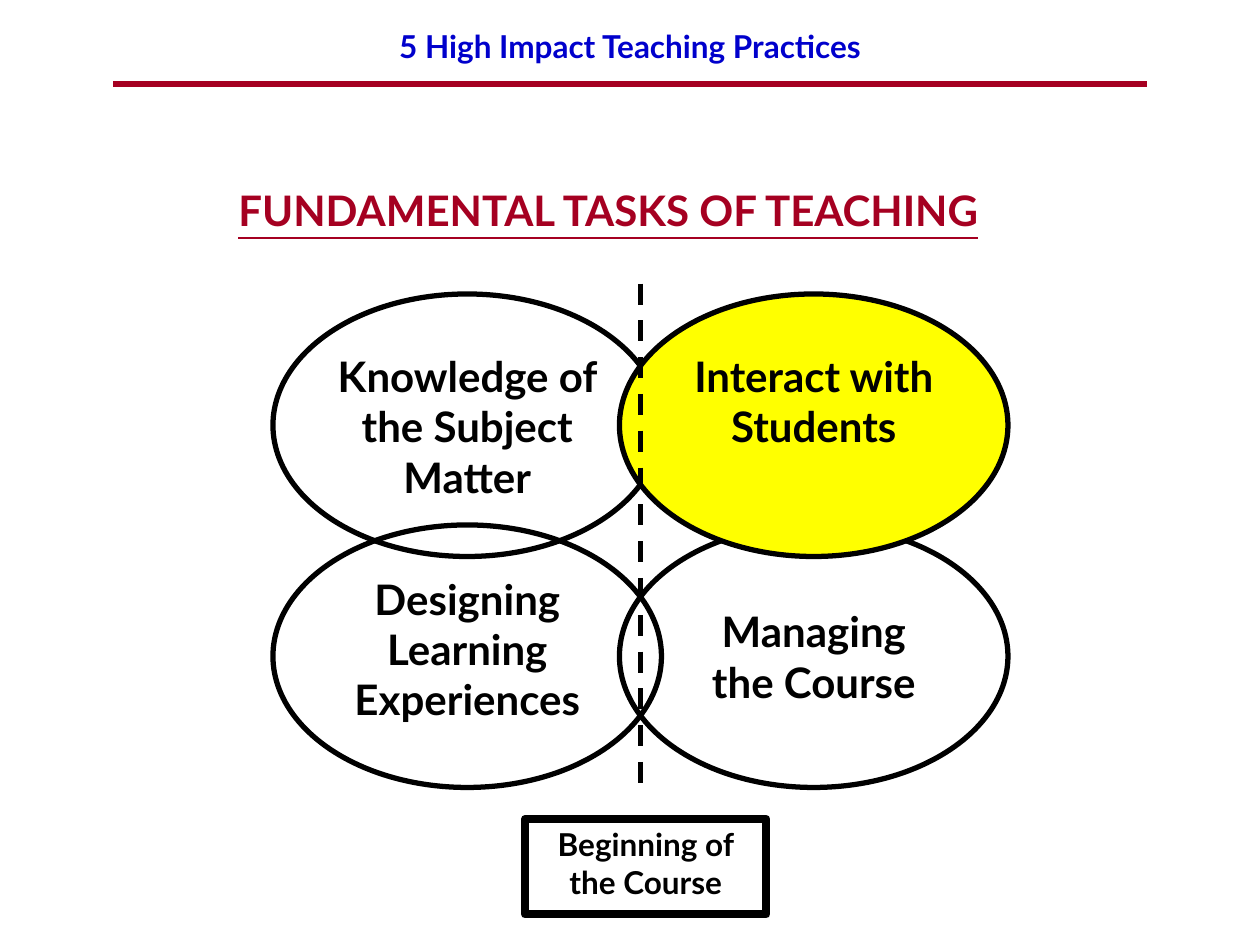
from dataclasses import dataclass

from lxml.etree import SubElement
from pptx import Presentation
from pptx.dml.color import RGBColor as RGB
from pptx.enum.dml import MSO_LINE
from pptx.enum.shapes import MSO_CONNECTOR, MSO_SHAPE
from pptx.enum.text import MSO_ANCHOR, MSO_AUTO_SIZE, PP_ALIGN
from pptx.oxml.ns import qn
from pptx.util import Pt

HEADER = "5 High Impact Teaching Practices"
TITLE = "FUNDAMENTAL TASKS OF TEACHING"
MILESTONE = "Beginning of the Course"
# column, row, text, lines, text width, text top, highlighted
TASKS = [
    (1, 1, "Managing the Course", 2, 260, 571, False),
    (0, 0, "Knowledge of the Subject Matter", 3, 310, 328, False),
    (1, 0, "Interact with Students", 3, 270, 328, True),
    (0, 1, "Designing Learning Experiences", 3, 270, 540, False),
]


@dataclass(frozen=True)
class Theme:
    font: str = "Lato"
    ink: RGB = RGB(0, 0, 0)
    blue: RGB = RGB(0x00, 0x00, 0xCC)
    red: RGB = RGB(0xA5, 0x00, 0x21)
    yellow: RGB = RGB(0xFF, 0xFF, 0x00)
    large: int = 24
    small: int = 18
    line: float = 3
    frame: float = 4.5


T = Theme()
PX = 7620
LEFT, TOP = 260, 280
STEP_X, STEP_Y = 330, 220
OVAL_W, OVAL_H = 370, 250
LINE_H, PADDING = 48, 12


def px(*values):
    return [v * PX for v in values]


def write(shape, text, size, color, align=PP_ALIGN.CENTER, underline=None):
    tf = shape.text_frame
    tf.word_wrap = True
    tf.auto_size = MSO_AUTO_SIZE.SHAPE_TO_FIT_TEXT
    tf.vertical_anchor = MSO_ANCHOR.TOP
    p = tf.paragraphs[0]
    p.alignment = align
    r = p.add_run()
    r.text = text
    f = r.font
    f.name, f.size, f.bold, f.underline = T.font, Pt(size), True, underline
    f.color.rgb = color


def add_text(s, box, text, size, color):
    write(s.shapes.add_textbox(*px(*box)), text, size, color)


def add_outline(s, kind, box, width, fill=None):
    sp = s.shapes.add_shape(kind, *px(*box))
    sp.shadow.inherit = False
    sp.line.color.rgb = T.ink
    sp.line.width = Pt(width)
    if fill is None:
        sp.fill.background()
    else:
        sp.fill.solid()
        sp.fill.fore_color.rgb = fill
    return sp


def add_line(s, ends, color, dash=None):
    c = s.shapes.add_connector(MSO_CONNECTOR.STRAIGHT, *px(*ends))
    c.line.color.rgb = color
    c.line.width = Pt(T.line)
    if dash is not None:
        c.line.dash_style = dash
    SubElement(c._element.spPr, qn("a:effectLst"))


def main():
    prs = Presentation()
    prs.slide_width, prs.slide_height = px(1200, 900)
    s = prs.slides.add_slide(prs.slide_layouts[5])

    title = s.shapes.title
    title.left, title.top, title.width, title.height = px(215, 170, 770, 60)
    write(title, TITLE, T.large, T.red, PP_ALIGN.LEFT, True)

    add_text(s, (130, 20, 940, 48), HEADER, T.small, T.blue)
    add_line(s, (108, 80, 1092, 80), T.red)

    for col, row, text, lines, width, top, highlighted in TASKS:
        x, y = LEFT + col * STEP_X, TOP + row * STEP_Y
        add_outline(s, MSO_SHAPE.OVAL, (x, y, OVAL_W, OVAL_H), T.line,
                    T.yellow if highlighted else None)
        box = (x + (OVAL_W - width) // 2, top, width, lines * LINE_H + PADDING)
        add_text(s, box, text, T.large, T.ink)

    add_line(s, (610, 270, 610, 760), T.ink, MSO_LINE.DASH)
    frame = add_outline(s, MSO_SHAPE.RECTANGLE, (500, 780, 230, 91), T.frame)
    write(frame, MILESTONE, T.small, T.ink)

    prs.save("out.pptx")


if __name__ == "__main__":
    main()
